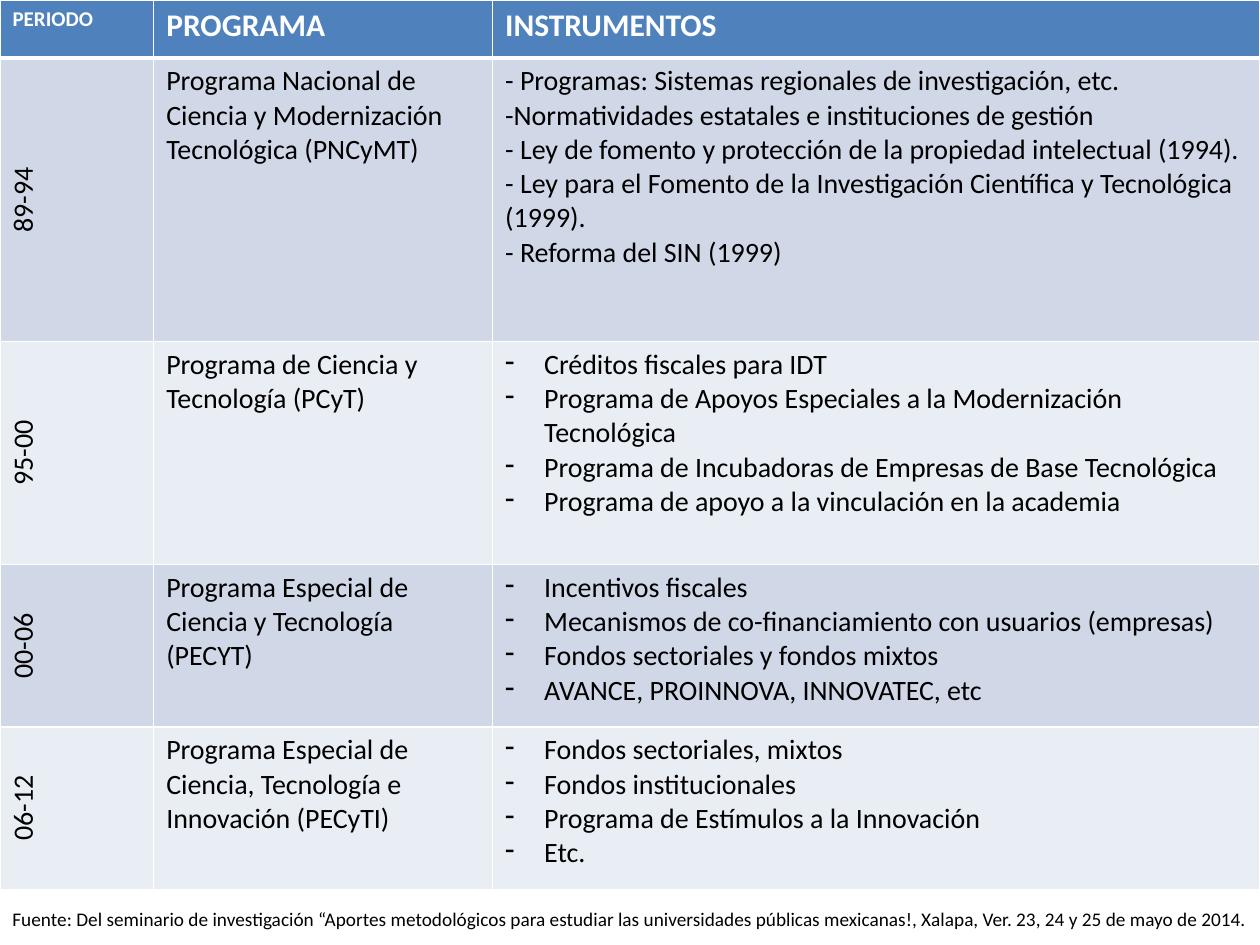
from lxml.etree import SubElement
from pptx import Presentation
from pptx.dml.color import RGBColor
from pptx.enum.text import PP_ALIGN
from pptx.oxml.ns import qn
from pptx.util import Inches, Pt

WHITE = RGBColor(0xFF, 0xFF, 0xFF)
BLACK = RGBColor(0, 0, 0)
HEADER_BLUE = RGBColor(0x4F, 0x81, 0xBD)
BANDS = (RGBColor(0xD0, 0xD8, 0xE8), RGBColor(0xE9, 0xED, 0xF4))
FONT = "Calibri"

# Content
HEADINGS = [("PERIODO", 12), ("PROGRAMA", 18), ("INSTRUMENTOS", 18)]
# period, programme, instruments, whether the instruments are bulleted
PERIODS = [
    ("89-94", "Programa Nacional de Ciencia y Modernización Tecnológica (PNCyMT)", [
        "- Programas: Sistemas regionales de investigación, etc.",
        "-Normatividades estatales e instituciones de gestión",
        "- Ley de fomento y protección de la propiedad intelectual (1994).",
        "- Ley para el Fomento de la Investigación Científica y Tecnológica (1999).",
        "- Reforma del SIN (1999)",
    ], False),
    ("95-00", "Programa de Ciencia y Tecnología (PCyT)", [
        "Créditos fiscales para IDT",
        "Programa de Apoyos Especiales a la Modernización Tecnológica",
        "Programa de Incubadoras de Empresas de Base Tecnológica",
        "Programa de apoyo a la vinculación en la academia",
    ], True),
    ("00-06", "Programa Especial de Ciencia y Tecnología (PECYT)", [
        "Incentivos fiscales",
        "Mecanismos de co-financiamiento con usuarios (empresas)",
        "Fondos sectoriales y fondos mixtos",
        "AVANCE, PROINNOVA, INNOVATEC, etc",
    ], True),
    ("06-12", "Programa Especial de Ciencia, Tecnología e Innovación (PECyTI)", [
        "Fondos sectoriales, mixtos",
        "Fondos institucionales",
        "Programa de Estímulos a la Innovación",
        "Etc.",
    ], True),
]
SOURCE = ("Fuente: Del seminario de investigación “Aportes metodológicos para estudiar "
          "las universidades públicas mexicanas!, Xalapa, Ver. 23, 24 y 25 de mayo de 2014.")
COLUMN_WIDTHS = [1.22, 2.69, 6.09]
ROW_HEIGHTS = [0.46, 2.25, 1.77, 1.29, 1.29]


def write(frame, lines, size=16, color=BLACK, bold=False, align=None, bulleted=False):
    """Fill a text frame with one paragraph per line."""
    for index, line in enumerate(lines):
        paragraph = frame.paragraphs[0] if index == 0 else frame.add_paragraph()
        paragraph.alignment = align
        run = paragraph.add_run()
        run.text = line
        run.font.name = FONT
        run.font.size = Pt(size)
        run.font.bold = bold
        run.font.color.rgb = color
        if bulleted:
            properties = paragraph._p.get_or_add_pPr()
            properties.set("marL", str(Inches(0.31)))
            properties.set("indent", str(-Inches(0.31)))
            SubElement(properties, qn("a:buChar"), char="-")


def paint(cell, fill, top=1, bottom=1):
    """Give a cell white borders and a solid fill."""
    properties = cell._tc.get_or_add_tcPr()
    for side, width in (("L", 1), ("R", 1), ("T", top), ("B", bottom)):
        border = SubElement(properties, qn(f"a:ln{side}"), w=str(Pt(width)))
        solid = SubElement(border, qn("a:solidFill"))
        SubElement(solid, qn("a:srgbClr"), val=str(WHITE))
    cell.fill.solid()
    cell.fill.fore_color.rgb = fill


def main():
    prs = Presentation()
    prs.slide_width, prs.slide_height = Inches(10), Inches(7.5)
    slide = prs.slides.add_slide(prs.slide_layouts[6])

    # Table grid
    programmes = slide.shapes.add_table(
        len(ROW_HEIGHTS), len(COLUMN_WIDTHS), 0, 0,
        Inches(sum(COLUMN_WIDTHS)), Inches(sum(ROW_HEIGHTS))).table
    for column, width in zip(programmes.columns, COLUMN_WIDTHS):
        column.width = Inches(width)
    for row, height in zip(programmes.rows, ROW_HEIGHTS):
        row.height = Inches(height)

    # Heading row
    for cell, (heading, size) in zip(programmes.rows[0].cells, HEADINGS):
        paint(cell, HEADER_BLUE, bottom=3)
        write(cell.text_frame, [heading], size=size, color=WHITE, bold=True)

    # One row per period, in alternating bands
    for index, (period, programme, instruments, bulleted) in enumerate(PERIODS):
        cells = list(programmes.rows[index + 1].cells)
        for cell in cells:
            paint(cell, BANDS[index % 2], top=3 if index == 0 else 1)
        cells[0]._tc.get_or_add_tcPr().set("vert", "vert270")
        write(cells[0].text_frame, [period], align=PP_ALIGN.CENTER)
        write(cells[1].text_frame, [programme])
        write(cells[2].text_frame, instruments, bulleted=bulleted)

    # Source line
    source = slide.shapes.add_textbox(0, Inches(7.15), Inches(10.12), Inches(0.29))
    source.text_frame.word_wrap = False
    write(source.text_frame, [SOURCE], size=11)

    prs.save("out.pptx")


if __name__ == "__main__":
    main()
